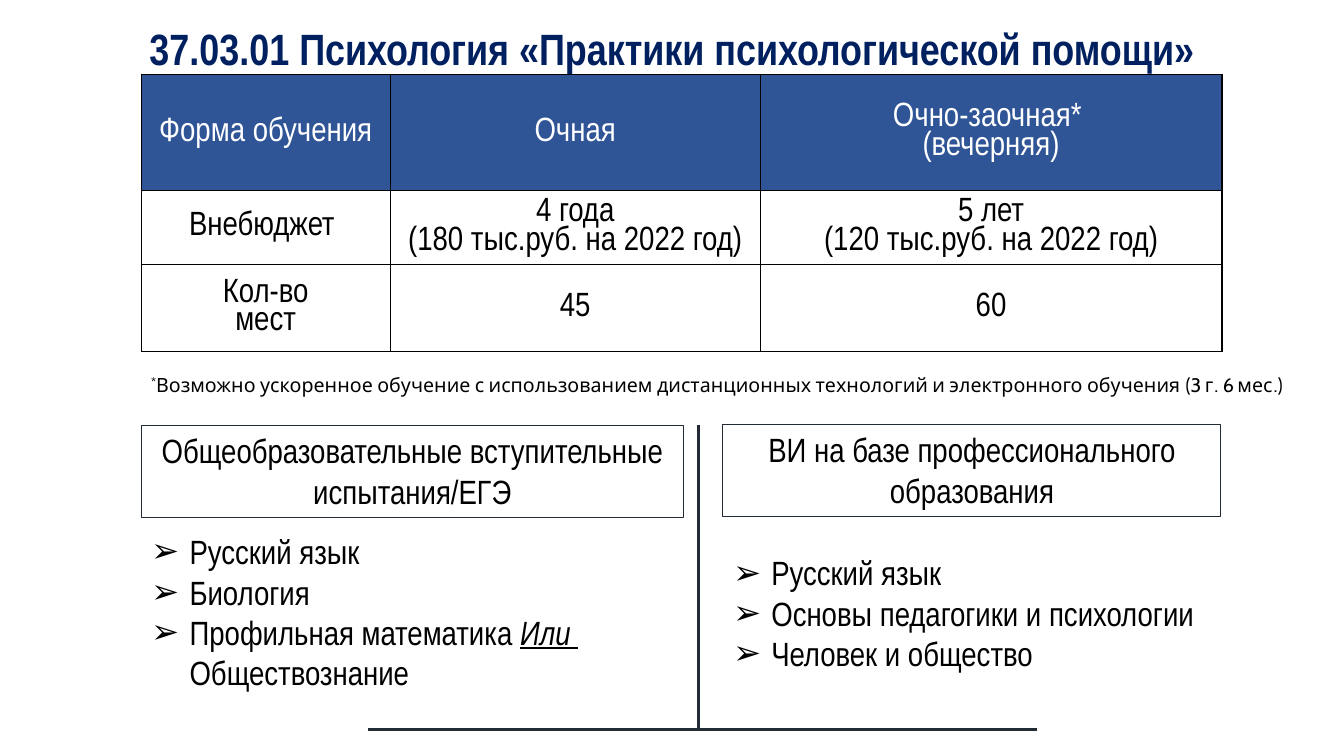
from lxml import etree
from pptx import Presentation
from pptx import util as u
from pptx.dml.color import RGBColor
from pptx.enum import shapes, text
from pptx.oxml.ns import qn

THEME = {
    "font": "Arial Narrow", "note_font": "Cabin",
    "title_size": 54, "size": 24, "note_size": 14,
    "navy": "002060", "header": "2F5597", "line": "222A35",
    "black": "000000", "white": "FFFFFF",
}
TITLE = "37.03.01 Психология «Практики психологической помощи»"
TABLE_ROWS = [
    ["Форма обучения", "Очная", "Очно-заочная* \v(вечерняя)"],
    ["Внебюджет ", "4 года\n(180 тыс.руб. на 2022 год)", "5 лет\v(120 тыс.руб. на 2022 год)"],
    ["Кол-во\vмест", "45", "60"],
]
COLUMN_WIDTHS = [2.47, 3.67, 4.58]
ROW_HEIGHTS = [1.15, 0.73, 0.87]
NOTE = [
    ("*", {"bold": True, "raised": True}),
    ("Возможно ускоренное обучение с использованием дистанционных технологий "
     "и электронного обучения (3 г. 6 мес.)", {}),
]
EXAMS = [
    {
        "heading": "Общеобразовательные вступительные испытания/ЕГЭ",
        "heading_box": (1.4, 4.22, 5.38, 0.91),
        "list_box": (1.4, 5.22, 5.38, 1.72),
        "subjects": [
            [("Русский язык", {})],
            [("Биология", {})],
            [("Профильная математика ", {}), ("Или ", {"italic": True, "underline": True}),
             (" ", {"italic": True}), ("Обществознание", {})],
        ],
    },
    {
        "heading": "ВИ на базе профессионального образования",
        "heading_box": (7.17, 4.21, 4.94, 0.91),
        "list_box": (7.17, 5.43, 4.94, 1.31),
        "subjects": [
            [("Русский язык", {})],
            [("Основы педагогики и психологии", {})],
            [("Человек и общество", {})],
        ],
    },
]
DIVIDERS = [(6.93, 4.22, 6.93, 7.24), (3.65, 7.24, 10.29, 7.24)]


def color(name):
    return RGBColor.from_string(THEME[name])


def inches(values):
    return [u.Inches(value) for value in values]


def place(shape, box):
    shape.left, shape.top, shape.width, shape.height = inches(box)


def style_run(run, size="size", ink="black", font="font",
              bold=False, italic=False, underline=False, raised=False):
    run.font.name = THEME[font]
    run.font.size = u.Pt(THEME[size])
    run.font.color.rgb = color(ink)
    run.font.bold = bold
    run.font.italic = italic
    run.font.underline = underline
    if raised:
        run.font._element.set("baseline", "30000")


def add_runs(paragraph, runs, **style):
    for words, extra in runs:
        run = paragraph.add_run()
        run.text = words
        style_run(run, **style, **extra)


def center(text_frame, line_spacing=1.0, **style):
    for paragraph in text_frame.paragraphs:
        paragraph.alignment = text.PP_ALIGN.CENTER
        paragraph.line_spacing = line_spacing
        for run in paragraph.runs:
            style_run(run, **style)


def add_borders(cell):
    properties = cell._tc.get_or_add_tcPr()
    for side in ("lnL", "lnR", "lnT", "lnB"):
        border = etree.SubElement(properties, qn(f"a:{side}"), w=str(u.Pt(1)))
        fill = etree.SubElement(border, qn("a:solidFill"))
        etree.SubElement(fill, qn("a:srgbClr"), val=THEME["black"])


def add_bullet(paragraph):
    properties = paragraph._p.get_or_add_pPr()
    indent = u.Inches(0.38)
    properties.set("marL", str(indent))
    properties.set("indent", str(-indent))
    etree.SubElement(properties, qn("a:buFont"), typeface="Arial")
    etree.SubElement(properties, qn("a:buChar"), char="➢")


def add_table(slide):
    box = inches((1.4, 0.74, sum(COLUMN_WIDTHS), sum(ROW_HEIGHTS)))
    table = slide.shapes.add_table(len(ROW_HEIGHTS), len(COLUMN_WIDTHS), *box).table
    table.horz_banding = False
    for column, width in zip(table.columns, COLUMN_WIDTHS):
        column.width = u.Inches(width)
    for index, (row, height) in enumerate(zip(table.rows, ROW_HEIGHTS)):
        row.height = u.Inches(height)
        for cell, words in zip(row.cells, TABLE_ROWS[index]):
            cell.text_frame.text = words
            cell.vertical_anchor = text.MSO_ANCHOR.MIDDLE
            add_borders(cell)
            if index == 0:
                cell.fill.solid()
                cell.fill.fore_color.rgb = color("header")
            else:
                cell.fill.background()
            center(cell.text_frame, 0.9, ink="black" if index else "white")


def add_heading(slide, words, box):
    shape = slide.shapes.add_shape(shapes.MSO_SHAPE.RECTANGLE, *inches(box))
    shape.shadow.inherit = False
    shape.fill.background()
    shape.line.color.rgb = color("line")
    shape.line.width = u.Pt(0.75)
    shape.text_frame.word_wrap = True
    shape.text_frame.vertical_anchor = text.MSO_ANCHOR.TOP
    shape.text_frame.text = words
    center(shape.text_frame)


def fill_list(placeholder, subjects, box):
    place(placeholder, box)
    frame = placeholder.text_frame
    frame.auto_size = text.MSO_AUTO_SIZE.NONE
    for index, runs in enumerate(subjects):
        paragraph = frame.add_paragraph() if index else frame.paragraphs[0]
        paragraph.space_before = u.Pt(0)
        add_bullet(paragraph)
        add_runs(paragraph, runs)


def add_dividers(slide):
    group = slide.shapes.add_group_shape()
    for ends in DIVIDERS:
        line = group.shapes.add_connector(shapes.MSO_CONNECTOR.STRAIGHT, *inches(ends))
        line.line.color.rgb = color("line")
        line.line.width = u.Pt(2.25)
        etree.SubElement(line._element.spPr, qn("a:effectLst"))


def main():
    presentation = Presentation()
    presentation.slide_width = u.Inches(13.33)
    presentation.slide_height = u.Inches(7.5)
    slide = presentation.slides.add_slide(presentation.slide_layouts[3])

    title = slide.shapes.title
    place(title, (0.92, 0.15, 11.5, 0.96))
    title.text_frame.auto_size = text.MSO_AUTO_SIZE.NONE
    title.text_frame.text = TITLE
    center(title.text_frame, 0.9, size="title_size", ink="navy", bold=True, raised=True)

    add_table(slide)
    for number, exam in enumerate(EXAMS, start=1):
        add_heading(slide, exam["heading"], exam["heading_box"])
        fill_list(slide.placeholders[number], exam["subjects"], exam["list_box"])
    add_dividers(slide)

    note = slide.shapes.add_textbox(*inches((1.4, 3.65, 11.5, 0.34)))
    note.text_frame.word_wrap = True
    add_runs(note.text_frame.paragraphs[0], NOTE, size="note_size", font="note_font")

    presentation.save("out.pptx")


if __name__ == "__main__":
    main()
